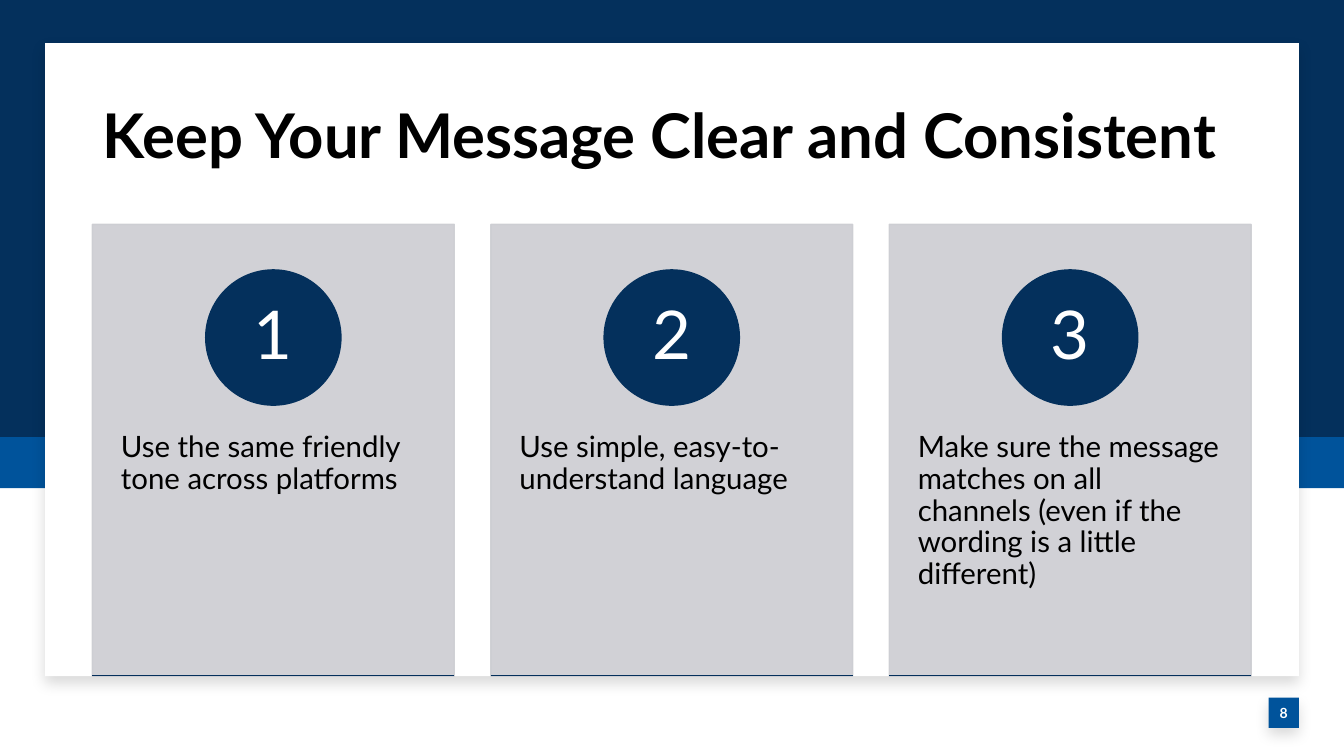
import pptx
import pptx.util
import pptx.dml.color
import pptx.enum.shapes
import pptx.enum.text
import pptx.oxml
import pptx.oxml.ns
import lxml.etree

Pt = pptx.util.Pt
SHAPE = pptx.enum.shapes.MSO_SHAPE
ALIGN = pptx.enum.text.PP_ALIGN
ANCHOR = pptx.enum.text.MSO_ANCHOR
qn = pptx.oxml.ns.qn

COLORS = {
    "navy": "04305C",
    "blue": "00539B",
    "white": "FFFFFF",
    "gray": "CCCDD2",
    "black": "000000",
}
SHADOW = (
    f'<a:outerShdw {pptx.oxml.ns.nsdecls("a")} blurRad="{Pt(10)}" dist="{Pt(5)}" '
    'dir="5400000" algn="t" rotWithShape="0"><a:srgbClr val="000000">'
    '<a:alpha val="15000"/></a:srgbClr></a:outerShdw>'
)
TIPS = [
    "Use the same friendly tone across platforms",
    "Use simple, easy-to-understand language",
    "Make sure the message matches on all channels (even if the wording is a little different)",
]
PANEL_BOTTOM = 483
CARD_LEFT, CARD_TOP, CARD_WIDTH, CARD_PITCH = 66, 160.3, 258.5, 284.6
CIRCLE_TOP, CIRCLE_SIZE = 192.8, 96.6


class SlideBuilder:
    """Holds the style and the current slide, and draws each kind of element."""

    def __init__(self, page, font="Lato"):
        self.page = page
        self.font = font

    def color(self, name):
        return pptx.dml.color.RGBColor.from_string(COLORS[name])

    def shape(self, kind, left, top, width, height, fill, line=None, shadow=False, alpha=None):
        box = self.page.shapes.add_shape(kind, Pt(left), Pt(top), Pt(width), Pt(height))
        box.shadow.inherit = False
        box.fill.solid()
        box.fill.fore_color.rgb = self.color(fill)
        if line:
            box.line.color.rgb = self.color(line)
            box.line.width = Pt(1)
        else:
            box.line.fill.background()
        if shadow:
            box.element.spPr.find(qn("a:effectLst")).append(pptx.oxml.parse_xml(SHADOW))
        if alpha:
            for tint in box.element.spPr.iter(qn("a:srgbClr")):
                lxml.etree.SubElement(tint, qn("a:alpha")).set("val", str(alpha * 1000))
        return box

    def set_text(self, box, text, size, color, bold=False, align=ALIGN.LEFT,
                 anchor=ANCHOR.MIDDLE, insets=(0, 0), spacing=0.9):
        frame = box.text_frame
        frame.word_wrap = True
        frame.auto_size = pptx.enum.text.MSO_AUTO_SIZE.NONE
        frame.vertical_anchor = anchor
        frame.margin_left = frame.margin_right = Pt(insets[0])
        frame.margin_top = frame.margin_bottom = Pt(insets[1])
        frame.text = text
        para = frame.paragraphs[0]
        para.alignment = align
        para.line_spacing = spacing
        para.font.name = self.font
        para.font.size = Pt(size)
        para.font.bold = bold
        para.font.color.rgb = self.color(color)

    def title(self, text, left, top, width, height):
        box = self.page.shapes.title
        box.element.getparent().append(box.element)
        box.left, box.top, box.width, box.height = Pt(left), Pt(top), Pt(width), Pt(height)
        self.set_text(box, text, 44, "black", bold=True, insets=(7.2, 3.6))

    def text(self, text, left, top, width, height):
        box = self.page.shapes.add_textbox(Pt(left), Pt(top), Pt(width), Pt(height))
        self.set_text(box, text, 21, "black", anchor=ANCHOR.TOP, insets=(20.4, 25.9))

    def rule(self, left, top, width):
        line = self.page.shapes.add_connector(
            pptx.enum.shapes.MSO_CONNECTOR.STRAIGHT, Pt(left), Pt(top), Pt(left + width), Pt(top))
        line.line.color.rgb = self.color("navy")
        line.line.width = Pt(1)
        lxml.etree.SubElement(line.element.spPr, qn("a:effectLst"))

    def card(self, index, tip):
        left = CARD_LEFT + index * CARD_PITCH
        self.shape(SHAPE.RECTANGLE, left, CARD_TOP, CARD_WIDTH, PANEL_BOTTOM - CARD_TOP,
                   "gray", line="gray", alpha=90)
        self.text(tip, left, 282.8, CARD_WIDTH, 193.7)
        circle = self.shape(SHAPE.OVAL, left + (CARD_WIDTH - CIRCLE_SIZE) / 2, CIRCLE_TOP,
                            CIRCLE_SIZE, CIRCLE_SIZE, "navy", line="navy")
        self.set_text(circle, str(index + 1), 48, "white", align=ALIGN.CENTER)
        self.rule(left, PANEL_BOTTOM - 0.3, CARD_WIDTH)


def main():
    deck = pptx.Presentation()
    deck.slide_width, deck.slide_height = Pt(960), Pt(540)
    builder = SlideBuilder(deck.slides.add_slide(deck.slide_layouts[5]))

    builder.shape(SHAPE.RECTANGLE, 0, 0, 960, 312.3, "navy")
    builder.shape(SHAPE.RECTANGLE, 0, 312.3, 960, 36.3, "blue")
    builder.shape(SHAPE.RECTANGLE, 32.2, 30.8, 895.6, PANEL_BOTTOM - 30.8, "white", shadow=True)
    badge = builder.shape(SHAPE.RECTANGLE, 906.2, 498.4, 21.6, 21.6, "blue", shadow=True)
    builder.set_text(badge, "8", 10, "white", bold=True, align=ALIGN.CENTER, spacing=1.0)

    builder.title("Keep Your Message Clear and Consistent", CARD_LEFT, 46.8, 828, 104.4)
    for index, tip in enumerate(TIPS):
        builder.card(index, tip)

    deck.save("out.pptx")


if __name__ == "__main__":
    main()
